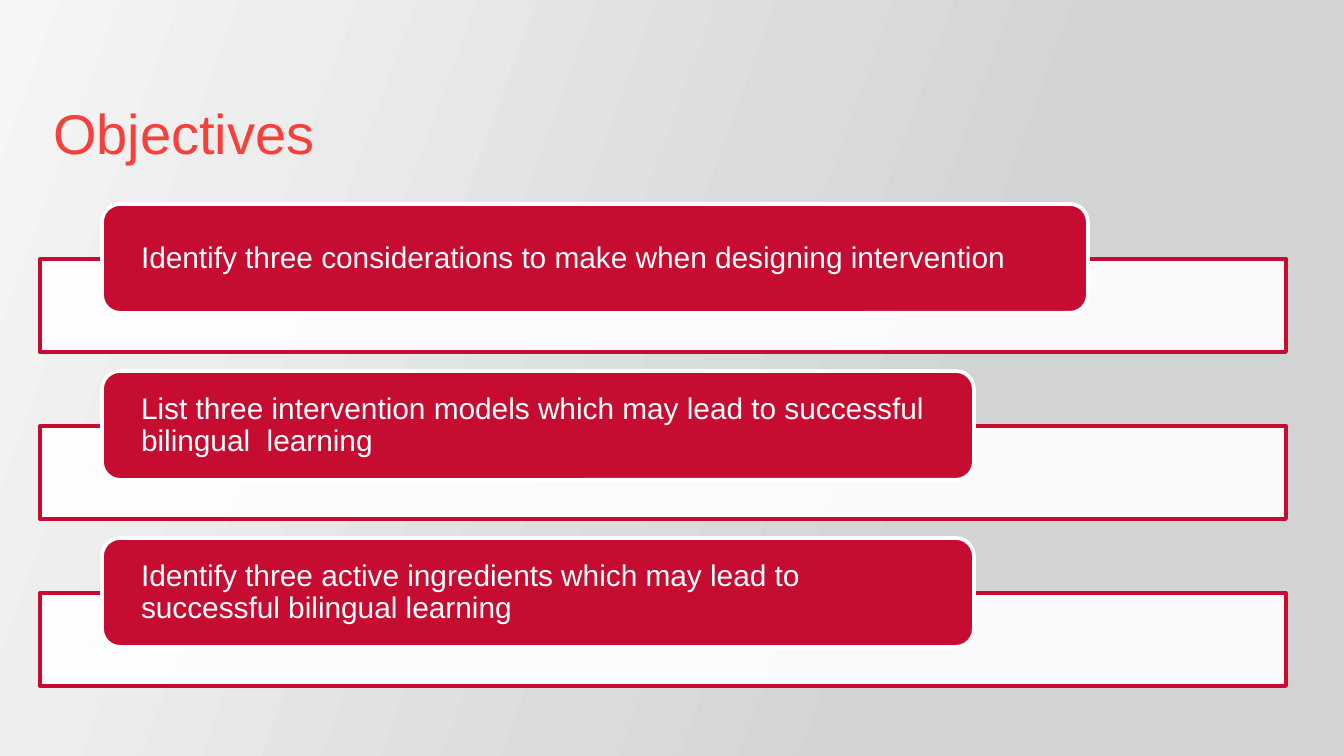
import pptx
import pptx.dml.color
import pptx.enum.shapes
import pptx.enum.text
import pptx.oxml.ns
import pptx.util
from lxml import etree

RGBColor = pptx.dml.color.RGBColor
SHAPE = pptx.enum.shapes.MSO_SHAPE
ANCHOR = pptx.enum.text.MSO_ANCHOR

RED = RGBColor(0xC6, 0x0C, 0x30)
TITLE_RED = RGBColor(0xF7, 0x40, 0x3A)
WHITE = RGBColor(0xFF, 0xFF, 0xFF)
LIGHT_GREY = RGBColor(0xF6, 0xF6, 0xF6)
GREY = RGBColor(0xD1, 0xD4, 0xD3)

FONT = "Arial"
EMU_PER_PX = 914400 / 134.4

# Objective text and width of its label
OBJECTIVES = [
    ("Identify three considerations to make when designing intervention", 986),
    ("List three intervention models which may lead to successful bilingual  learning", 872),
    ("Identify three active ingredients which may lead to successful bilingual learning", 872),
]
FIRST_TOP, ROW_PITCH = 204, 167


def px(length):
    return pptx.util.Emu(round(length * EMU_PER_PX))


def write_text(box, text, *, size, color, anchor, insets, line_spacing=None):
    frame = box.text_frame
    frame.word_wrap = True
    frame.auto_size = pptx.enum.text.MSO_AUTO_SIZE.NONE
    frame.vertical_anchor = anchor
    (frame.margin_left, frame.margin_top,
     frame.margin_right, frame.margin_bottom) = map(px, insets)
    para = frame.paragraphs[0]
    para.alignment = pptx.enum.text.PP_ALIGN.LEFT
    para.line_spacing = line_spacing
    span = para.add_run()
    span.text = text
    span.font.name = FONT
    span.font.size = pptx.util.Pt(size)
    span.font.color.rgb = color


class SlideBuilder:
    def __init__(self, page):
        self.page = page

    def background(self, start, end, end_position, angle):
        fill = self.page.background.fill
        fill.gradient()
        fill.gradient_angle = angle
        first, last = fill.gradient_stops
        first.color.rgb, first.position = start, 0
        last.color.rgb, last.position = end, end_position

    def title(self, text, left, top, width, height):
        box = self.page.shapes.title
        box.left, box.top, box.width, box.height = map(px, (left, top, width, height))
        write_text(box, text, size=30, color=TITLE_RED,
                   anchor=ANCHOR.TOP, insets=(13, 13, 13, 13))

    def panel(self, kind, left, top, width, height, fill, line, opacity=None):
        shape = self.page.shapes.add_shape(kind, *map(px, (left, top, width, height)))
        shape.shadow.inherit = False
        shape.fill.solid()
        shape.fill.fore_color.rgb = fill
        shape.line.color.rgb = line
        shape.line.width = pptx.util.Pt(2)
        if opacity is not None:
            color = shape.fill._xPr.find(".//" + pptx.oxml.ns.qn("a:srgbClr"))
            alpha = etree.SubElement(color, pptx.oxml.ns.qn("a:alpha"))
            alpha.set("val", str(opacity * 1000))

    def label(self, text, left, top, width, height):
        box = self.page.shapes.add_textbox(*map(px, (left, top, width, height)))
        write_text(box, text, size=16, color=WHITE, anchor=ANCHOR.MIDDLE,
                   insets=(34, 0, 34, 0), line_spacing=0.9)


def main():
    deck = pptx.Presentation()
    deck.slide_width, deck.slide_height = px(1344), px(756)
    builder = SlideBuilder(deck.slides.add_slide(deck.slide_layouts[5]))

    # Backdrop and title
    builder.background(LIGHT_GREY, GREY, 0.7, 340)
    builder.title("Objectives", 40, 86, 992, 109)

    # One frame, red tab and text per objective
    for row, (text, width) in enumerate(OBJECTIVES):
        top = FIRST_TOP + row * ROW_PITCH
        builder.panel(SHAPE.RECTANGLE, 40, top + 55, 1246, 93, WHITE, RED, opacity=90)
        builder.panel(SHAPE.ROUNDED_RECTANGLE, 102, top, width, 109, RED, WHITE)
        builder.label(text, 107, top + 5, width - 10, 99)

    deck.save("out.pptx")


if __name__ == "__main__":
    main()
